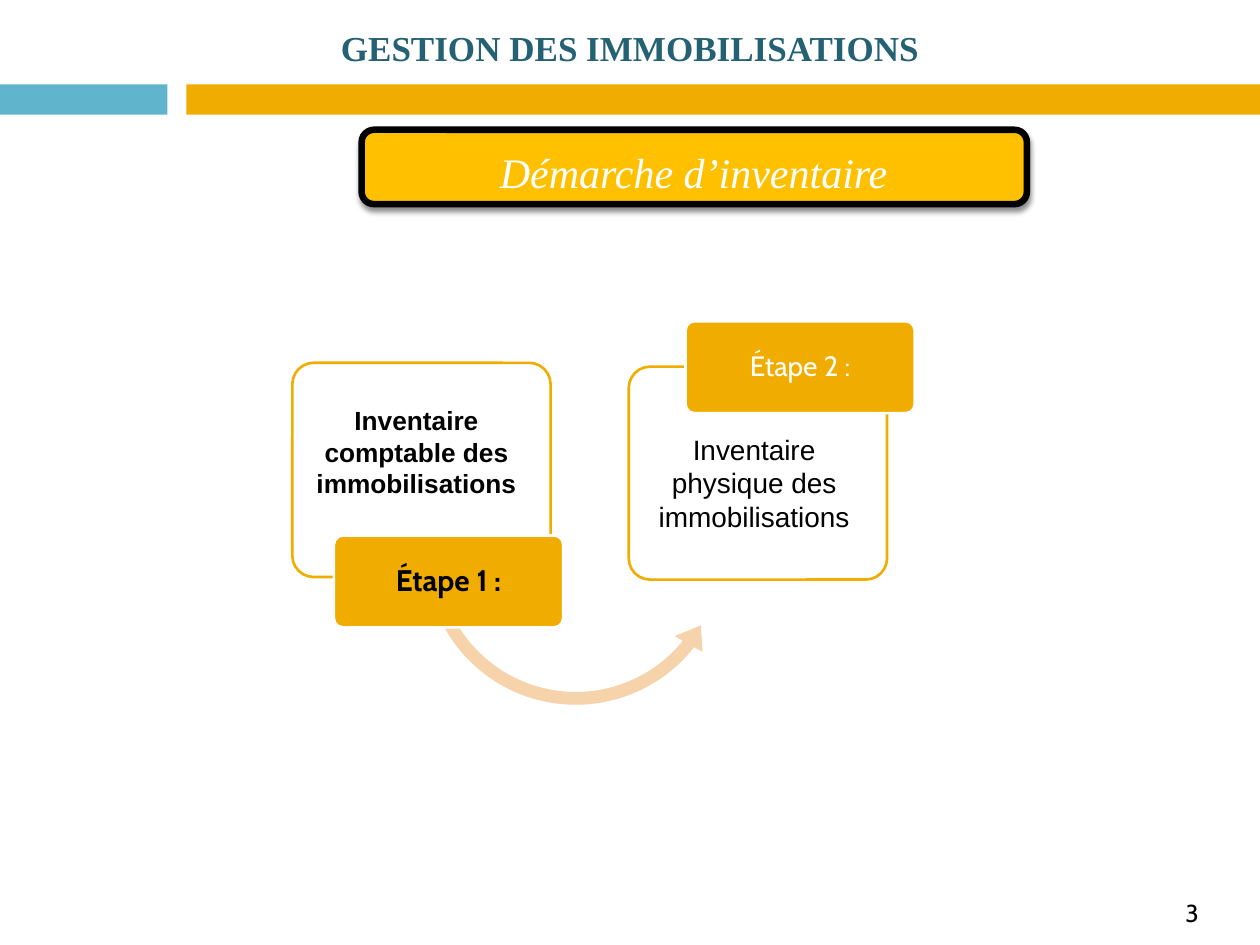
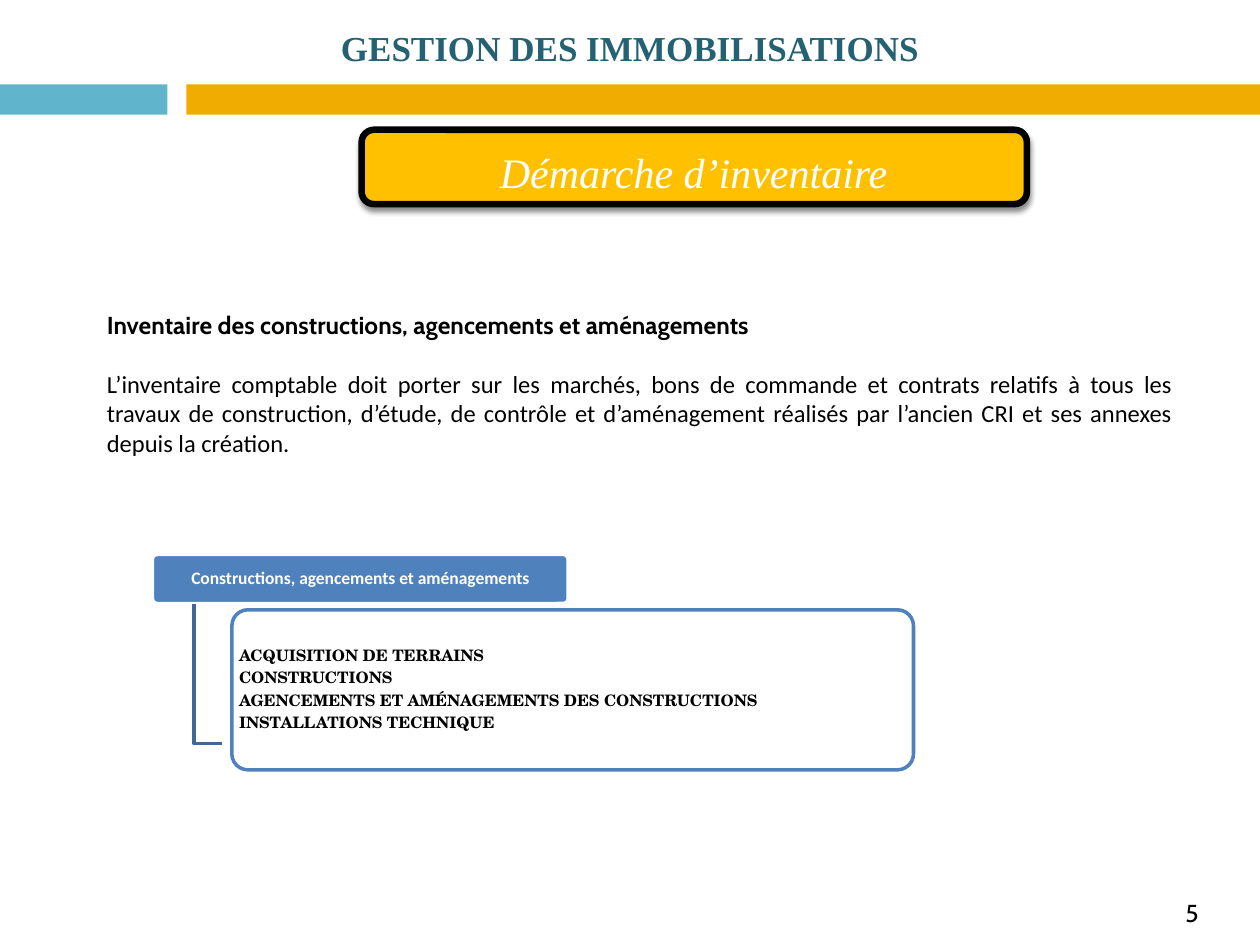
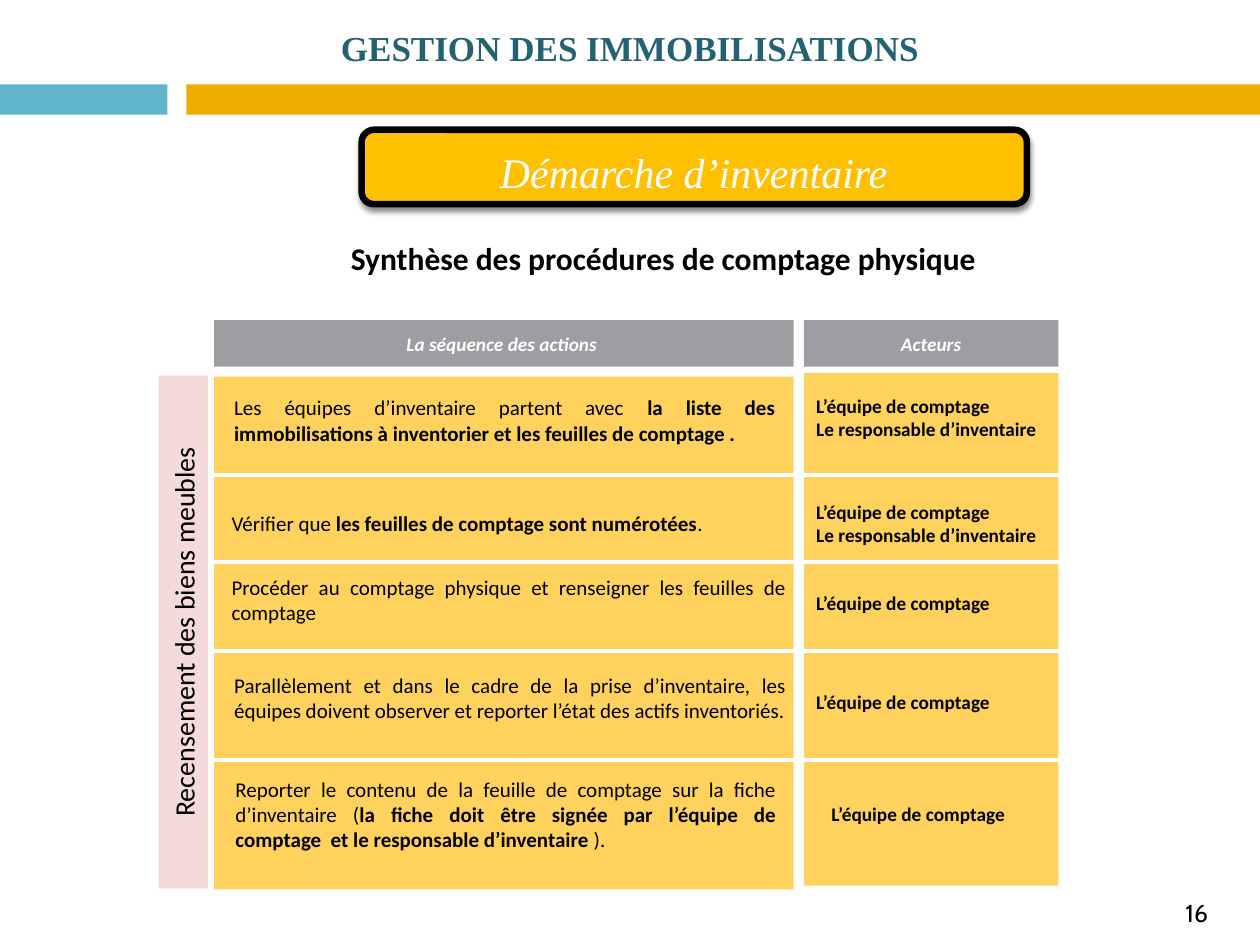
import lxml.etree
import pptx
import pptx.dml.color
import pptx.enum.shapes
import pptx.enum.text
import pptx.oxml
import pptx.oxml.ns
import pptx.util

Inches = pptx.util.Inches
Pt = pptx.util.Pt
RGB = pptx.dml.color.RGBColor.from_string
KIND = pptx.enum.shapes.MSO_SHAPE
ALIGN = pptx.enum.text.PP_ALIGN
ANCHOR = pptx.enum.text.MSO_ANCHOR
qn = pptx.oxml.ns.qn

HUE = {
    "sky": "60B5CC", "gold": "F0AD00", "amber": "FFC000", "sand": "FFD25D",
    "peach": "F6D3AB", "rose": "F4DADA", "teal": "246172", "blue": "4F81BD",
    "navy": "3F6797", "grey": "9D9DA2", "black": "000000", "white": "FFFFFF",
}
SIDE = {"left": ALIGN.LEFT, "mid": ALIGN.CENTER, "both": ALIGN.JUSTIFY}
SHADOW = (
    '<a:effectLst xmlns:a="http://schemas.openxmlformats.org/drawingml/2006/main">'
    '<a:outerShdw blurRad="38100" dist="30480" dir="5400000" rotWithShape="0">'
    '<a:srgbClr val="000000"><a:alpha val="45000"/></a:srgbClr>'
    '</a:outerShdw></a:effectLst>'
)


def box(page, at, kind=None, fill=None, line=None, width=1.5, adj=(), alpha=100):
    """Add a preset shape, or a text box when no kind is given."""
    place = [Inches(n) for n in at]
    if kind is None:
        return page.shapes.add_textbox(*place)
    shape = page.shapes.add_shape(kind, *place)
    shape.shadow.inherit = False
    for i, value in enumerate(adj):
        shape.adjustments[i] = value
    shape.fill.solid()
    shape.fill.fore_color.rgb = RGB(HUE[fill])
    if alpha < 100:
        tint = shape._element.spPr.find(qn("a:solidFill"))[0]
        lxml.etree.SubElement(tint, qn("a:alpha")).set("val", str(alpha * 1000))
    if line:
        shape.line.color.rgb = RGB(HUE[line])
        shape.line.width = Pt(width)
    else:
        shape.line.fill.background()
    return shape


def write(shape, lines, size, face="Calibri", hue="black", bold=False, slant=False,
          side="left", mid=False, inset=None, lead=None, after=None):
    """Fill a shape with paragraphs; words between asterisks are bold."""
    frame = shape.text_frame
    frame.word_wrap = True
    frame.vertical_anchor = ANCHOR.MIDDLE if mid else ANCHOR.TOP
    if inset is not None:
        frame.margin_left = frame.margin_right = Inches(inset)
        frame.margin_top = frame.margin_bottom = Inches(inset)
    for i, line in enumerate(lines):
        para = frame.add_paragraph() if i else frame.paragraphs[0]
        para.alignment = SIDE[side]
        para.line_spacing = lead
        if after:
            para.space_after = Pt(after)
        font = para.font
        font.name, font.size, font.italic = face, Pt(size), slant
        font.bold = bold
        font.color.rgb = RGB(HUE[hue])
        for j, part in enumerate(line.split("*")):
            if part:
                run = para.add_run()
                run.text = part
                if j % 2:
                    run.font.bold = True
    return frame


deck = pptx.Presentation()
deck.slide_width, deck.slide_height = Inches(10), Inches(7.5)

# Bands, title, banner and number on every slide
pages = []
for number in ("3", "5", "16"):
    page = deck.slides.add_slide(deck.slide_layouts[6])
    pages.append(page)
    box(page, (0, 0.67, 1.33, 0.24), KIND.RECTANGLE, "sky")
    box(page, (1.48, 0.67, 8.52, 0.24), KIND.RECTANGLE, "gold")
    write(box(page, (0.47, 0.16, 9.06, 0.44)), ["GESTION DES IMMOBILISATIONS"],
          20, "Times New Roman", "teal", bold=True, side="mid")
    banner = box(page, (2.87, 1.03, 5.28, 0.59), KIND.ROUNDED_RECTANGLE,
                 "amber", "black", 3.75)
    props = banner._element.spPr
    props.replace(props.find(qn("a:effectLst")), pptx.oxml.parse_xml(SHADOW))
    frame = write(box(page, (3.35, 0.91, 3.81, 0.63)), ["Démarche d’inventaire"],
                  24, "Times New Roman", "white", slant=True, side="mid", lead=1.5)
    frame.word_wrap = False
    frame.auto_size = pptx.enum.text.MSO_AUTO_SIZE.SHAPE_TO_FIT_TEXT
    para = frame.paragraphs[0]
    para.space_before = Pt(5)
    indent = para._p.get_or_add_pPr()
    indent.set("marL", str(Inches(0.88)))
    indent.set("indent", str(Inches(-0.38)))
    write(box(page, (9.31, 7.08, 0.44, 0.34)), [number], 14, "Cabin")
steps, works, count = pages

# Two steps joined by a curved arrow
card = dict(kind=KIND.ROUNDED_RECTANGLE, fill="white", line="gold", adj=[0.1], alpha=90)
label = dict(kind=KIND.ROUNDED_RECTANGLE, fill="gold", line="white", adj=[0.1])
tag = dict(face="Cabin", side="mid", mid=True, inset=0.03, lead=0.9, after=6)
box(steps, (2.32, 2.88, 2.05, 1.7), **card)
box(steps, (3.3, 3.13, 2.54, 2.54), KIND.LEFT_CIRCULAR_ARROW, "peach",
    adj=(0.04, 5.34, 23.09, 90.25, 0.05))
write(box(steps, (2.65, 4.25, 1.82, 0.73), **label), ["Étape 1 :"], 17, bold=True, **tag)
box(steps, (4.99, 2.91, 2.05, 1.69), **card)
write(box(steps, (5.44, 2.55, 1.82, 0.73), **label), ["Étape 2 :"], 16, hue="white", **tag)
write(box(steps, (5.1, 3.38, 1.77, 0.91)), ["Inventaire physique des immobilisations"],
      16, "Arial", side="mid")
write(box(steps, (2.39, 3.16, 1.83, 0.86)), ["Inventaire comptable des immobilisations"],
      15, "Arial", bold=True, side="mid")

# Constructions: text, then a heading with its list
frame = write(box(works, (0.75, 2.41, 8.66, 1.28)), [
    "*Inventaire des constructions, agencements et aménagements*",
    "L’inventaire comptable doit porter sur les marchés, bons de commande et contrats "
    "relatifs à tous les travaux de construction, d’étude, de contrôle et d’aménagement "
    "réalisés par l’ancien CRI et ses annexes depuis la création.",
], 14, side="both")
frame.paragraphs[0].font.name = "Cabin"
frame.paragraphs[0].space_after = Pt(17)
head = box(works, (1.21, 4.4, 3.3, 0.39), KIND.ROUNDED_RECTANGLE, "blue", "white", 2, [0.1])
write(head, ["Constructions, agencements et aménagements"], 10, hue="white", bold=True,
      side="mid", mid=True, inset=0.02, lead=0.9, after=3.5)
path = works.shapes.build_freeform(Inches(1.54), Inches(4.79))
path.add_line_segments([(Inches(x), Inches(y)) for x, y in ((1.54, 5.9), (1.76, 5.9))],
                       close=False)
hook = path.convert_to_shape()
hook.shadow.inherit = False
hook.fill.background()
hook.line.color.rgb = RGB(HUE["navy"])
hook.line.width = Pt(2)
items = box(works, (1.84, 4.84, 5.41, 1.27), KIND.ROUNDED_RECTANGLE, "white", "blue", 2,
            [0.1], 90)
write(items, [
    "ACQUISITION DE TERRAINS",
    "CONSTRUCTIONS",
    "AGENCEMENTS ET AMÉNAGEMENTS DES CONSTRUCTIONS",
    "INSTALLATIONS TECHNIQUE",
], 9, "TeX Gyre Schola", bold=True, mid=True, inset=0.02, lead=0.9, after=3.15)

# Counting procedures: actions and who does them
write(box(count, (1.53, 1.85, 7.53, 0.4)), ["Synthèse des procédures de comptage physique "],
      18, bold=True, side="mid")
for left, width, top, name in ((1.7, 4.6, 2.99, "La séquence des actions "),
                               (6.38, 2.02, 2.96, "Acteurs")):
    box(count, (left, top, width, 4.07), KIND.RECTANGLE, "sand")
    write(box(count, (left, 2.54, width, 0.37), KIND.RECTANGLE, "grey"), [name], 11,
          hue="white", bold=True, slant=True, side="mid", mid=True)

for left, top in ((0.82, 3.77), (0.98, 4.46), (0.87, 5.17), (0.7, 6.03)):
    rule = count.shapes.add_connector(
        pptx.enum.shapes.MSO_CONNECTOR.STRAIGHT,
        Inches(left), Inches(top), Inches(left + 8.39), Inches(top))
    rule.line.color.rgb = RGB(HUE["white"])
    rule.line.width = Pt(2.25)
    lxml.etree.SubElement(rule._element.spPr, qn("a:effectLst"))

actions = (
    ((1.76, 2.81, 4.49, 1.05), True,
     "Les équipes d’inventaire partent avec *la liste des immobilisations à inventorier "
     "et les feuilles de comptage .*"),
    ((1.74, 3.76, 4.6, 0.78), True,
     "Vérifier que* les feuilles de comptage sont numérotées*."),
    ((1.74, 4.51, 4.6, 0.5), False,
     "Procéder au comptage physique et renseigner les feuilles de comptage"),
    ((1.76, 5.29, 4.58, 0.5), False,
     "Parallèlement et dans le cadre de la prise d’inventaire, les équipes doivent "
     "observer et reporter l’état des actifs inventoriés."),
    ((1.77, 6.11, 4.49, 0.71), False,
     "Reporter le contenu de la feuille de comptage sur la fiche d’inventaire (*la fiche "
     "doit être signée par l’équipe de comptage  et le responsable d’inventaire *)."),
)
for at, mid, words in actions:
    write(box(count, at), [words], 12, side="both", mid=mid)

team = ["L’équipe de comptage"]
both = team + ["Le responsable d’inventaire"]
for left, top, names in ((6.38, 3.08, both), (6.38, 3.92, both), (6.38, 4.64, team),
                         (6.38, 5.43, team), (6.5, 6.32, team)):
    write(box(count, (left, top, 2.1, 0.06 + 0.2 * len(names))), names, 11, bold=True)

strip = box(count, (-0.58, 4.82, 4.07, 0.39), KIND.RECTANGLE, "rose")
strip.rotation = 270
write(strip, ["Recensement des biens meubles"], 16, side="mid", mid=True)

deck.save("out.pptx")
